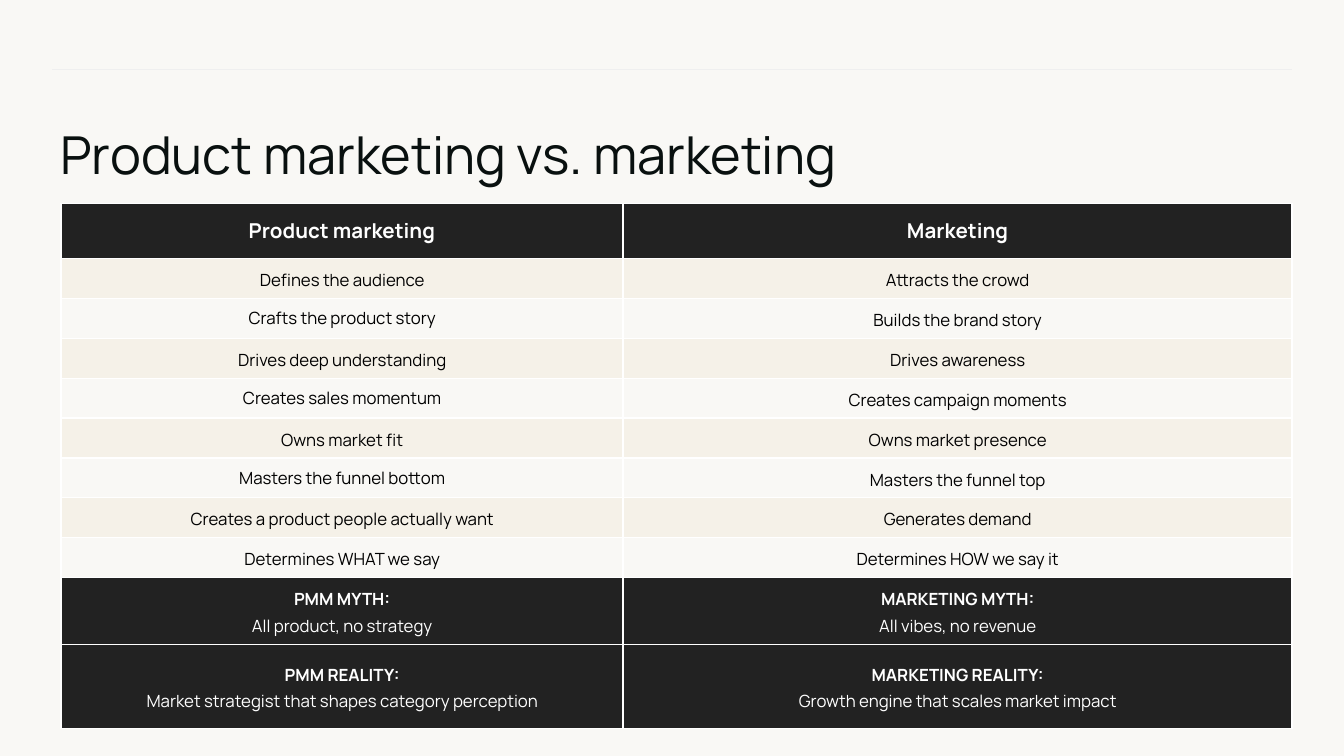
"""Build the slide that compares product marketing with marketing."""
from dataclasses import dataclass

from lxml import etree
from pptx import Presentation
from pptx.dml.color import RGBColor
from pptx.enum.shapes import MSO_CONNECTOR
from pptx.enum.text import MSO_ANCHOR, PP_ALIGN
from pptx.oxml.ns import qn
from pptx.util import Inches, Pt

STRAIGHT = MSO_CONNECTOR.STRAIGHT
MIDDLE = MSO_ANCHOR.MIDDLE
CENTER = PP_ALIGN.CENTER

FONT = "Manrope"
SLIDE_W = 10
SLIDE_H = SLIDE_W * 9 / 16
COLORS = {
    "paper": "F9F8F5",
    "rule": "EFEFEF",
    "title": "09100F",
    "dark": "222222",
    "sand": "F5F1E8",
    "white": "FFFFFF",
    "black": "000000",
}


@dataclass(frozen=True)
class RowStyle:
    """Look of a table row, its height in percent of the slide."""
    height: float
    fill: str
    color: str
    size: float = 9
    margin: float = 0.05
    top_border: float = 0.75
    bold_first: bool = False
    spacings: tuple[float | None, float | None] = (1.15, 1.15)


@dataclass(frozen=True)
class Row:
    """Texts of both columns and the style they share."""
    style: RowStyle
    texts: tuple[str, str]


HEADER = RowStyle(7.3, "dark", "white", 11, 0.1, 1, True, (None, None))
SAND = RowStyle(5.28, "sand", "black")
PLAIN = RowStyle(5.28, "paper", "black", spacings=(None, 1.15))
LAST = RowStyle(5.28, "paper", "black")
MYTH = RowStyle(8.8, "dark", "white", bold_first=True)
REALITY = RowStyle(11.15, "dark", "white", bold_first=True)

COLUMNS = (41.8, 49.8)
ROWS = (
    Row(HEADER, ("Product marketing", "Marketing")),
    Row(SAND, ("Defines the audience", "Attracts the crowd")),
    Row(PLAIN, ("Crafts the product story", "Builds the brand story")),
    Row(SAND, ("Drives deep understanding", "Drives awareness")),
    Row(PLAIN, ("Creates sales momentum", "Creates campaign moments")),
    Row(SAND, ("Owns market fit", "Owns market presence")),
    Row(PLAIN, ("Masters the funnel bottom", "Masters the funnel top")),
    Row(SAND, ("Creates a product people actually want", "Generates demand")),
    Row(LAST, ("Determines WHAT we say", "Determines HOW we say it")),
    Row(MYTH, ("PMM MYTH:\nAll product, no strategy",
               "MARKETING MYTH:\nAll vibes, no revenue")),
    Row(REALITY, ("PMM REALITY:\nMarket strategist that shapes category perception",
                  "MARKETING REALITY:\nGrowth engine that scales market impact")),
)


def across(share: float) -> int:
    """Turn a percentage of the slide width into a length."""
    return Inches(SLIDE_W * share / 100)


def down(share: float) -> int:
    """Turn a percentage of the slide height into a length."""
    return Inches(SLIDE_H * share / 100)


def rgb(name: str) -> RGBColor:
    """Look up a named colour."""
    return RGBColor.from_string(COLORS[name])


def format_runs(p, size: float, color: str, bold: bool = False) -> None:
    """Apply one font to all runs of a paragraph."""
    for r in p.runs:
        r.font.name, r.font.size, r.font.bold = FONT, Pt(size), bold
        r.font.color.rgb = rgb(color)


def add_rule(slide) -> None:
    """Draw the thin line across the top."""
    ln = slide.shapes.add_connector(
        STRAIGHT, across(96.1), down(9.2), across(3.9), down(9.2))
    ln.line.color.rgb = rgb("rule")
    ln.line.width = Pt(0.75)
    etree.SubElement(ln._element.spPr, qn("a:effectLst"))


def add_title(slide, text: str) -> None:
    """Write the slide title."""
    sp = slide.shapes.add_textbox(across(4.5), down(16.2), across(92.3), down(9.1))
    tf = sp.text_frame
    tf.word_wrap = True
    tf.margin_left = tf.margin_right = tf.margin_top = tf.margin_bottom = 0
    tf.text = text
    p = tf.paragraphs[0]
    p.space_after = Pt(10)
    format_runs(p, 28, "title")


def set_borders(cell, top: float) -> None:
    """Give a cell white borders on all four sides."""
    tc_pr = cell._tc.get_or_add_tcPr()
    widths = {"a:lnL": 1, "a:lnR": 1, "a:lnT": top, "a:lnB": 0.75}
    for i, (tag, width) in enumerate(widths.items()):
        ln = etree.Element(qn(tag), w=str(Pt(width)))
        fill = etree.SubElement(ln, qn("a:solidFill"))
        etree.SubElement(fill, qn("a:srgbClr"), val=COLORS["white"])
        tc_pr.insert(i, ln)


def fill_cell(cell, text: str, style: RowStyle, spacing: float | None) -> None:
    """Write and format one table cell."""
    cell.fill.solid()
    cell.fill.fore_color.rgb = rgb(style.fill)
    set_borders(cell, style.top_border)
    cell.vertical_anchor = MIDDLE
    cell.margin_left = cell.margin_right = Inches(0.1)
    cell.margin_top = cell.margin_bottom = Inches(style.margin)
    cell.text_frame.text = text
    for i, p in enumerate(cell.text_frame.paragraphs):
        p.alignment = CENTER
        p.line_spacing = spacing
        format_runs(p, style.size, style.color, style.bold_first and i == 0)


def add_comparison(slide, rows: tuple[Row, ...]) -> None:
    """Draw the comparison table."""
    height = sum(row.style.height for row in rows)
    table = slide.shapes.add_table(
        len(rows), len(COLUMNS), across(4.55), down(26.9),
        across(sum(COLUMNS)), down(height)).table
    table.horz_banding = False
    for column, width in zip(table.columns, COLUMNS):
        column.width = across(width)
    for table_row, row in zip(table.rows, rows):
        table_row.height = down(row.style.height)
        for cell, text, spacing in zip(table_row.cells, row.texts, row.style.spacings):
            fill_cell(cell, text, row.style, spacing)


def main() -> None:
    """Assemble and save the presentation."""
    prs = Presentation()
    prs.slide_width, prs.slide_height = Inches(SLIDE_W), Inches(SLIDE_H)
    slide = prs.slides.add_slide(prs.slide_layouts[6])
    slide.background.fill.solid()
    slide.background.fill.fore_color.rgb = rgb("paper")
    add_rule(slide)
    add_title(slide, "Product marketing vs. marketing")
    add_comparison(slide, ROWS)
    prs.save("out.pptx")


if __name__ == "__main__":
    main()
